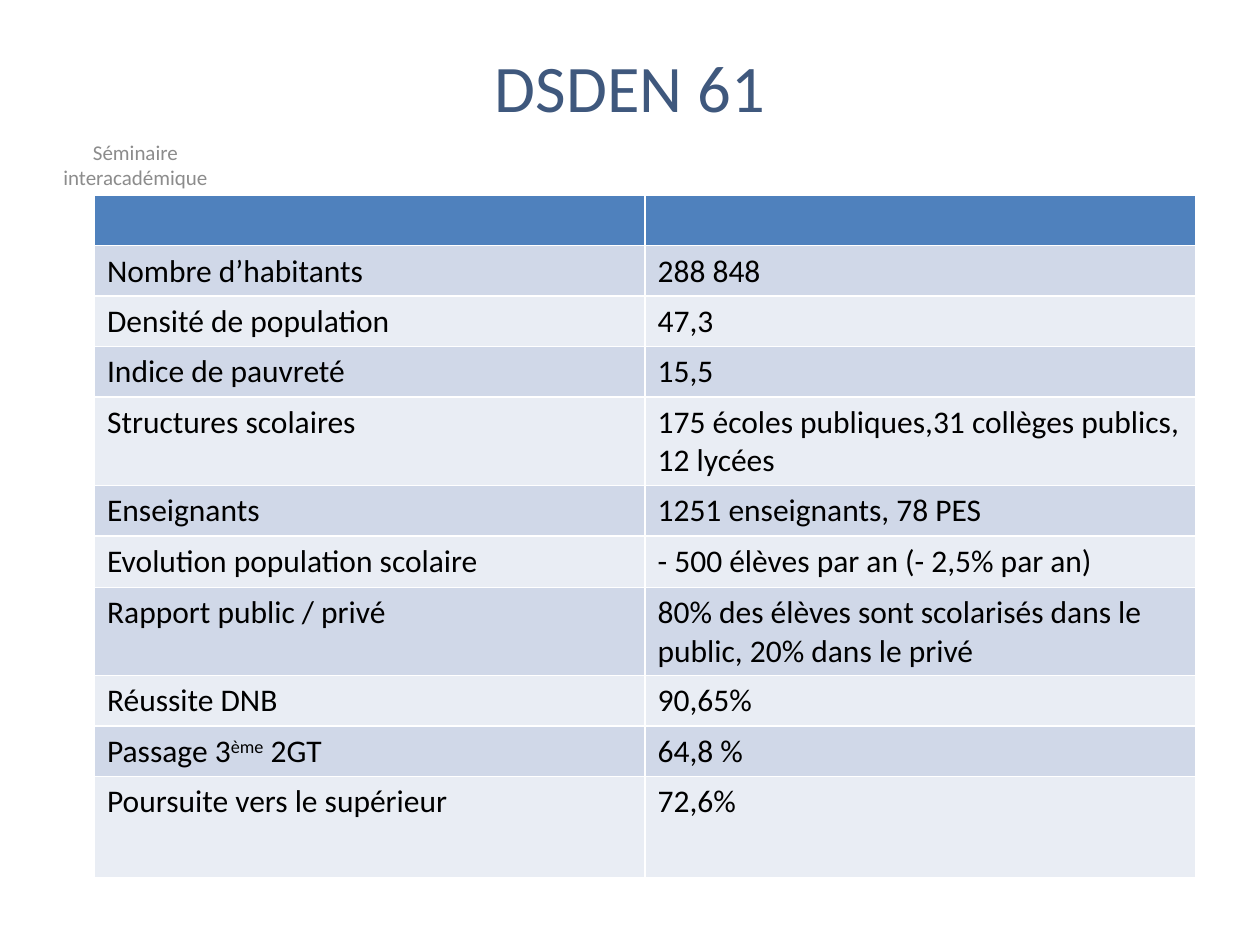
from pptx import Presentation
from pptx.dml.color import RGBColor
from pptx.enum import text as t
from pptx.util import Inches, Pt

TITLE = "DSDEN 61"
EVENT = "Séminaire interacadémique"
FONT = "Calibri"
COLORS = {"title": "3F587D", "event": "8C8C8C", "text": "000000",
          "header": "4F81BD", "odd": "D0D8E8", "even": "E9EDF4"}

# Label, value, row height; a newline starts a paragraph, ^ marks a superscript
ROWS = [
    ("", "", 0.38),
    ("Nombre d’habitants", "288 848", 0.38),
    ("Densité de population", "47,3", 0.38),
    ("Indice de pauvreté", "15,5", 0.38),
    ("Structures scolaires",
     "175 écoles publiques,31 collèges publics,\n12 lycées", 0.66),
    ("Enseignants", "1251 enseignants, 78 PES", 0.38),
    ("Evolution population scolaire", "- 500 élèves par an (- 2,5% par an)", 0.41),
    ("Rapport public / privé",
     "80% des élèves sont scolarisés dans le public, 20% dans le privé", 0.66),
    ("Réussite DNB", "90,65%", 0.38),
    ("Passage 3^ème^ 2GT", "64,8 %", 0.38),
    ("Poursuite vers le supérieur", "72,6%", 0.8),
]


def set_font(p, size, color):
    p.font.name = FONT
    p.font.size = Pt(size)
    p.font.color.rgb = RGBColor.from_string(COLORS[color])


def fill_text(tf, content, size, color, align=None):
    for i, line in enumerate(content.split("\n")):
        p = tf.add_paragraph() if i else tf.paragraphs[0]
        p.alignment = align
        for j, part in enumerate(line.split("^")):
            if part:
                r = p.add_run()
                r.text = part
                if j % 2:
                    r.font._element.set("baseline", "30000")
        set_font(p, size, color)


prs = Presentation()
prs.slide_width, prs.slide_height = Inches(10), Inches(7.5)
s = prs.slides.add_slide(prs.slide_layouts[5])

# Event name
sp = s.shapes.add_textbox(Inches(0.12), Inches(1.06), Inches(1.91), Inches(0.49))
tf = sp.text_frame
tf.word_wrap = True
tf.vertical_anchor = t.MSO_ANCHOR.MIDDLE
fill_text(tf, EVENT, 12, "event", t.PP_ALIGN.CENTER)

# Key figures
height = sum(row[2] for row in ROWS)
table = s.shapes.add_table(len(ROWS), 2, Inches(0.75), Inches(1.55),
                           Inches(8.74), Inches(height)).table
for i, (label, value, row_height) in enumerate(ROWS):
    table.rows[i].height = Inches(row_height)
    band = "header" if i == 0 else "odd" if i % 2 else "even"
    for cell, content in zip(table.rows[i].cells, (label, value)):
        cell.fill.solid()
        cell.fill.fore_color.rgb = RGBColor.from_string(COLORS[band])
        fill_text(cell.text_frame, content, 18, "text")

# Title
title = s.shapes.title
title.left, title.top = Inches(0.5), Inches(0.3)
title.width, title.height = Inches(9), Inches(0.77)
title.text_frame.vertical_anchor = t.MSO_ANCHOR.MIDDLE
fill_text(title.text_frame, TITLE, 38, "title", t.PP_ALIGN.CENTER)

prs.save("out.pptx")
